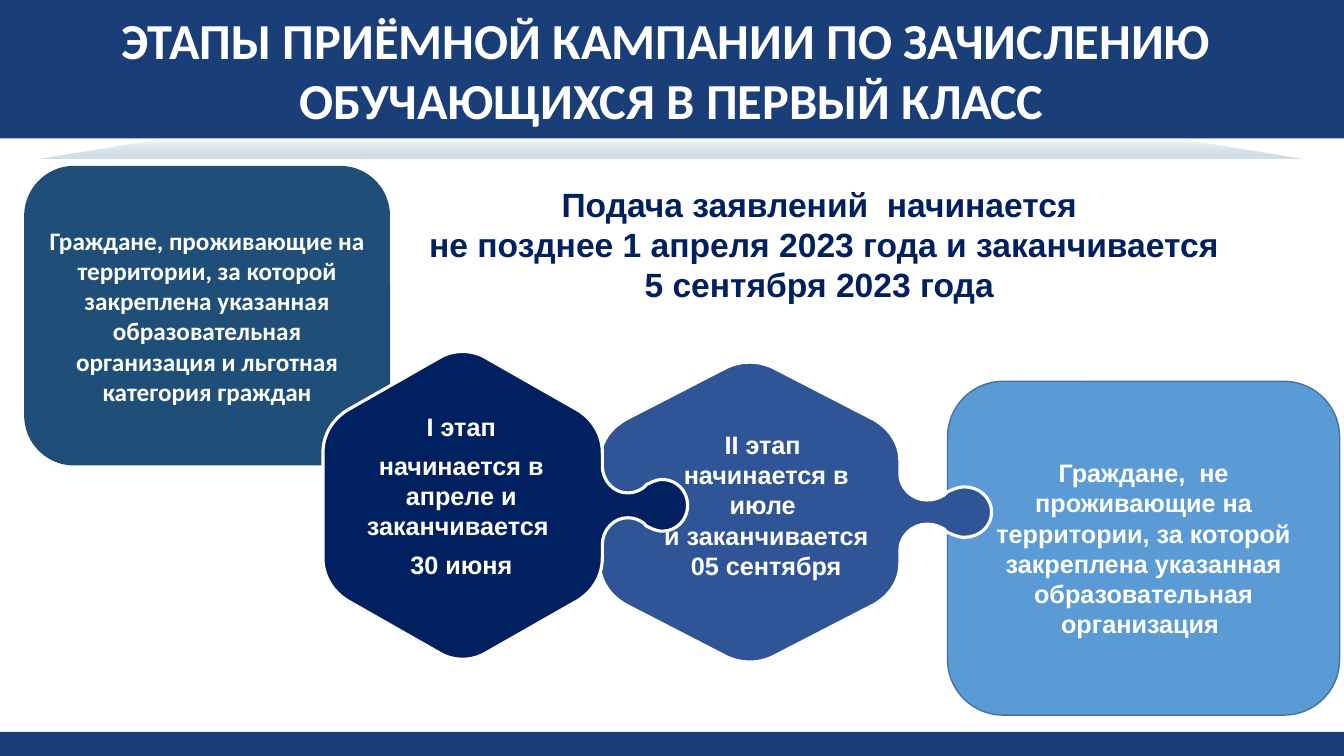
import dataclasses
import typing

import lxml.etree
import pptx
import pptx.dml.color
import pptx.enum.shapes
import pptx.enum.text
import pptx.oxml.ns
import pptx.util

Cm = pptx.util.Cm
Pt = pptx.util.Pt
qn = pptx.oxml.ns.qn
Shapes = pptx.enum.shapes.MSO_SHAPE
Anchor = pptx.enum.text.MSO_ANCHOR
Point = tuple[float, float]

COLORS = {
    "white": "FFFFFF",
    "banner": "1A3E78",
    "steel": "1F4E79",
    "sky": "5B9BD5",
    "sky_edge": "43739E",
    "indigo": "2F5597",
    "navy": "002060",
    "shade_start": "D1DCE5",
    "shade_end": "9DB9CB",
}

PIECE_WIDTH, PIECE_HEIGHT = 389, 298
PIECE_START: Point = (0, -51)
PIECE_UPPER_HALF: list[list[Point]] = [
    [(0, -68), (10, -83), (26, -92)],
    [(123, -142)],
    [(139, -151), (159, -151), (175, -142)],
    [(272, -92)],
    [(288, -83), (298, -68), (298, -51)],
    [(298, -38)],
    [(298, -24), (310, -12), (325, -12)],
    [(332, -12), (337, -14), (342, -17)],
    [(343, -18), (344, -19), (345, -20)],
    [(347, -21), (350, -22), (352, -23)],
    [(355, -24), (358, -25), (362, -25)],
    [(377, -25), (389, -14), (389, 0)],
]


@dataclasses.dataclass
class Area:
    left: float
    top: float
    width: float
    height: float

    def lengths(self) -> list[pptx.util.Length]:
        return [Cm(value) for value in dataclasses.astuple(self)]


@dataclasses.dataclass
class Wording:
    paragraphs: list[str]
    size: float = 18
    font: str = "Arial"
    color: str = "white"
    anchor: typing.Any = Anchor.MIDDLE
    space_after: float = 0


@dataclasses.dataclass
class Panel:
    area: Area
    kind: typing.Any
    fill: str
    edge: str | None = None
    wording: Wording | None = None


@dataclasses.dataclass
class Piece:
    area: Area
    fill: str


@dataclasses.dataclass
class Label:
    area: Area
    wording: Wording


BACK_PANELS = [
    Panel(Area(23.88, 9.61, 9.88, 8.41), Shapes.ROUNDED_RECTANGLE, "sky", "sky_edge", Wording([
        "Граждане,  не проживающие на территории, за которой закреплена "
        "указанная образовательная организация ",
    ])),
    Panel(Area(0, 18.44, 33.87, 0.61), Shapes.RECTANGLE, "banner"),
    Panel(Area(0, 0, 33.87, 3.49), Shapes.RECTANGLE, "banner", None, Wording(
        ["ЭТАПЫ ПРИЁМНОЙ КАМПАНИИ ПО ЗАЧИСЛЕНИЮ ", "ОБУЧАЮЩИХСЯ В ПЕРВЫЙ КЛАСС"],
        36, "Calibri")),
]
BANNER_SHADE: list[Point] = [(0.94, 4), (4.14, 3.48), (29.72, 3.48), (32.89, 4)]
PRIORITY_PANEL = Panel(
    Area(0.61, 4.18, 9.22, 7.55), Shapes.ROUNDED_RECTANGLE, "steel", None, Wording([
        "Граждане, проживающие на территории, за которой закреплена указанная "
        "образовательная организация и льготная категория граждан",
    ], font="Calibri"))
PIECES = [
    Piece(Area(15.11, 9.12, 9.88, 7.57), "indigo"),
    Piece(Area(8.14, 8.85, 9.19, 7.77), "navy"),
]
LABELS = [
    Label(Area(10.08, 4.5, 21.13, 3.33), Wording([
        "Подача заявлений  начинается",
        " не позднее 1 апреля 2023 года и заканчивается 5 сентября 2023 года",
    ], 24, color="navy", anchor=Anchor.TOP)),
    Label(Area(8.27, 10.22, 6.71, 4.52), Wording(
        [" I этап ", "начинается в апреле и заканчивается ", "30 июня"], space_after=6)),
    Label(Area(16.45, 10.69, 5.72, 4.11), Wording(
        ["II этап ", "начинается в июле ", "и заканчивается ", "05 сентября"],
        anchor=Anchor.TOP)),
]


def rgb(name: str) -> pptx.dml.color.RGBColor:
    return pptx.dml.color.RGBColor.from_string(COLORS[name])


def write(shape: typing.Any, wording: Wording) -> None:
    frame = shape.text_frame
    frame.word_wrap = True
    frame.vertical_anchor = wording.anchor
    for index, text in enumerate(wording.paragraphs):
        para = frame.add_paragraph() if index else frame.paragraphs[0]
        para.text = text
        para.alignment = pptx.enum.text.PP_ALIGN.CENTER
        para.space_after = Pt(wording.space_after)
        para.font.name = wording.font
        para.font.size = Pt(wording.size)
        para.font.bold = True
        para.font.color.rgb = rgb(wording.color)


def paint(shape: typing.Any, fill: str, edge: str | None, weight: float = 1) -> None:
    shape.shadow.inherit = False
    shape.fill.solid()
    shape.fill.fore_color.rgb = rgb(fill)
    if edge is None:
        shape.line.fill.background()
    else:
        shape.line.color.rgb = rgb(edge)
        shape.line.width = Pt(weight)


def draw_panel(page: typing.Any, panel: Panel) -> None:
    shape = page.shapes.add_shape(panel.kind, *panel.area.lengths())
    paint(shape, panel.fill, panel.edge)
    if panel.wording:
        write(shape, panel.wording)


def draw_outline(page: typing.Any, points: list[Point]) -> typing.Any:
    corners = [(Cm(x), Cm(y)) for x, y in points]
    builder = page.shapes.build_freeform(*corners[0])
    builder.add_line_segments(corners[1:], close=True)
    return builder.convert_to_shape()


def piece_segments() -> list[list[Point]]:
    upper = [[PIECE_START], *PIECE_UPPER_HALF]
    lower = []
    for before, segment in reversed(list(zip(upper, upper[1:]))):
        backward = [*reversed(segment[:-1]), before[-1]]
        lower.append([(x, -y) for x, y in backward])
    return upper[1:] + lower


def bend(shape: typing.Any, segments: list[list[Point]]) -> None:
    lines = iter(list(shape.element.spPr.iter(qn("a:lnTo"))))
    for segment in segments:
        group = [next(lines) for _ in segment]
        if len(group) == 3:
            curve = lxml.etree.Element(qn("a:cubicBezTo"))
            group[0].addprevious(curve)
            for line in group:
                curve.append(line[0])
                line.getparent().remove(line)


def fit_frame(shape: typing.Any, area: Area) -> None:
    _, top, _, height = area.lengths()
    rise = top - shape.top
    for outline in shape.element.spPr.iter(qn("a:path")):
        outline.set("h", str(int(height)))
        for point in outline.iter(qn("a:pt")):
            point.set("y", str(int(point.get("y")) - rise))
    shape.top, shape.height = top, height


def draw_piece(page: typing.Any, piece: Piece) -> None:
    area = piece.area
    segments = piece_segments()
    points = [(area.left + x * area.width / PIECE_WIDTH,
               area.top + (y / PIECE_HEIGHT + 0.5) * area.height)
              for segment in [[PIECE_START], *segments] for x, y in segment]
    shape = draw_outline(page, points)
    bend(shape, segments)
    fit_frame(shape, area)
    paint(shape, piece.fill, "white", 2.25)


def draw_banner_shade(page: typing.Any) -> None:
    shade = draw_outline(page, BANNER_SHADE)
    paint(shade, "shade_start", None)
    shade.fill.gradient()
    shade.fill.gradient_angle = 90
    for stop, name in zip(shade.fill.gradient_stops, ("shade_start", "shade_end")):
        stop.color.rgb = rgb(name)
    tints = list(shade.element.spPr.iter(qn("a:srgbClr")))
    lxml.etree.SubElement(tints[-1], qn("a:alpha"), val="0")


def main() -> None:
    deck = pptx.Presentation()
    deck.slide_width, deck.slide_height = Cm(33.87), Cm(19.05)
    page = deck.slides.add_slide(deck.slide_layouts[6])
    for panel in BACK_PANELS:
        draw_panel(page, panel)
    draw_banner_shade(page)
    draw_panel(page, PRIORITY_PANEL)
    for piece in PIECES:
        draw_piece(page, piece)
    for label in LABELS:
        write(page.shapes.add_textbox(*label.area.lengths()), label.wording)
    deck.save("out.pptx")


if __name__ == "__main__":
    main()
